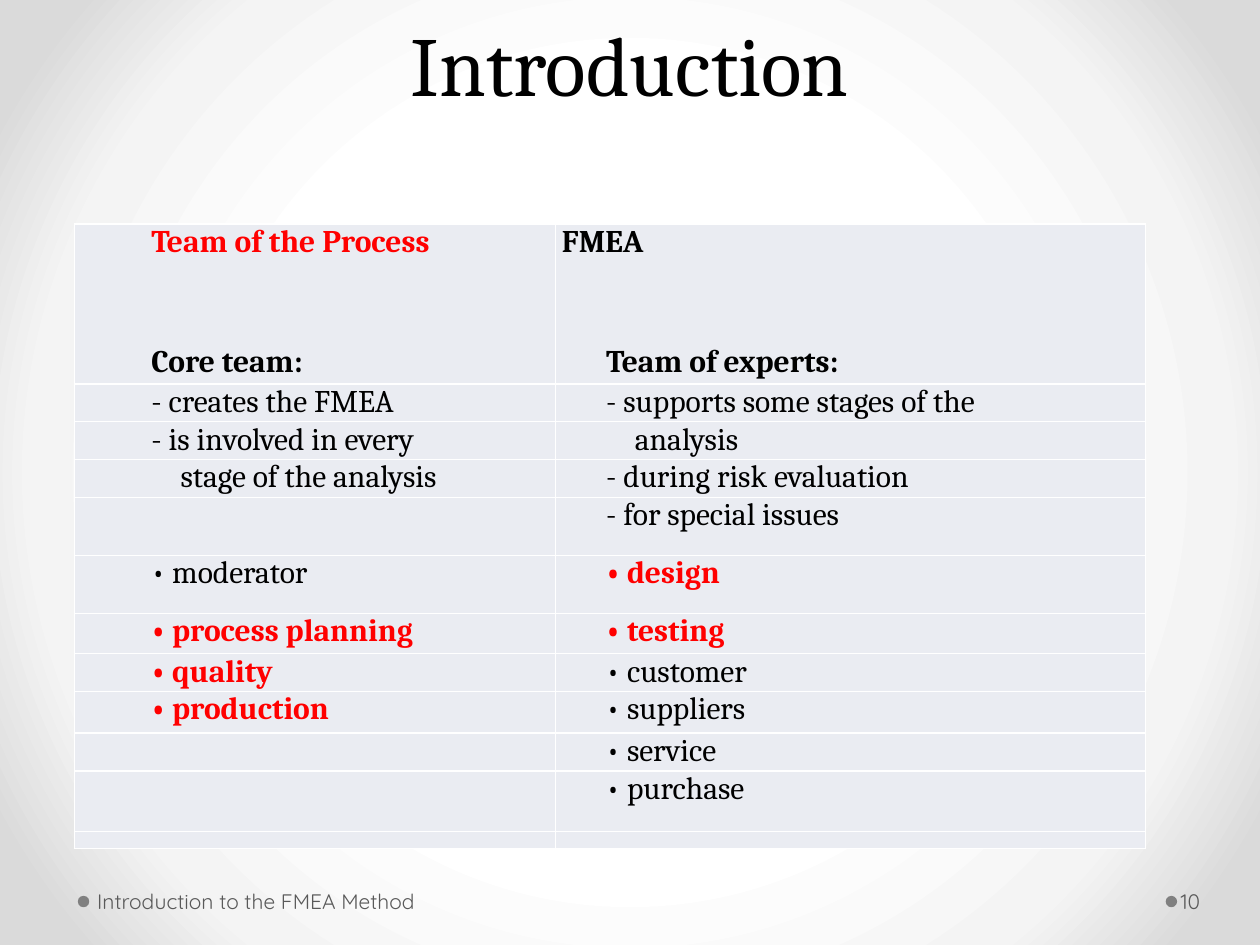
"""Build the FMEA introduction slide with its team table."""
from dataclasses import dataclass

from lxml import etree
from pptx import Presentation
from pptx import util as u
from pptx.dml import color
from pptx.enum import shapes, text
from pptx.oxml import ns


@dataclass(frozen=True)
class Theme:
    serif: str = "Cambria"
    sans: str = "Quicksand"
    ink: str = "000000"
    accent: str = "FF0000"
    muted: str = "595959"
    dot: str = "808080"
    cell: str = "EAECF2"
    border: str = "FFFFFF"
    backdrop: tuple = ((50, "FFFFFF"), (76, "F4F4F4"), (92, "DADADA"))
    title: int = 48
    body: int = 18
    small: int = 12
    tiny: int = 8


def write(p, words, font=None, size=None, rgb=None, bold=False, indent=0, before=0, after=0):
    r = p.add_run()
    r.text = words
    r.font.name = font or th.serif
    r.font.size = u.Pt(size or th.body)
    r.font.bold = bold
    r.font.color.rgb = color.RGBColor.from_string(rgb or th.ink)
    p.space_before, p.space_after = u.Pt(before), u.Pt(after)
    pPr = p._p.get_or_add_pPr()
    pPr.set("marL", str(u.Cm(indent)))
    pPr.set("indent", "0")


th = Theme()
prs = Presentation()
prs.slide_width, prs.slide_height = u.Cm(25.4), u.Cm(19.05)
s = prs.slides.add_slide(prs.slide_layouts[5])

s.background.fill.gradient()
grad = s.background._cSld.find(".//" + ns.qn("a:gradFill"))
for child in list(grad):
    grad.remove(child)
stops = etree.SubElement(grad, ns.qn("a:gsLst"))
for pos, rgb in th.backdrop:
    stop = etree.SubElement(stops, ns.qn("a:gs"), pos=str(pos * 1000))
    etree.SubElement(stop, ns.qn("a:srgbClr"), val=rgb)
circle = etree.SubElement(grad, ns.qn("a:path"), path="circle")
etree.SubElement(circle, ns.qn("a:fillToRect"), l="50000", t="50000", r="50000", b="50000")

title = s.shapes.title
title.left, title.top, title.width, title.height = u.Cm(1.27), 0, u.Cm(22.86), u.Cm(4.45)
tf = title.text_frame
tf.vertical_anchor = text.MSO_ANCHOR.BOTTOM
tf.margin_bottom = u.Cm(2.17)
p = tf.paragraphs[0]
p.alignment = text.PP_ALIGN.CENTER
p.line_spacing = u.Pt(58)
write(p, "Introduction", size=th.title)

footers = [
    ("Introduction to the FMEA Method", 1.57, 1.83, 7.9, 0.13),
    ("10", 23.5, 23.72, 1.55, 0.08),
]
for words, dot_left, left, width, inset in footers:
    sp = s.shapes.add_shape(shapes.MSO_SHAPE.OVAL, u.Cm(dot_left), u.Cm(18.06), u.Cm(0.23), u.Cm(0.23))
    sp.shadow.inherit = False
    sp.fill.solid()
    sp.fill.fore_color.rgb = color.RGBColor.from_string(th.dot)
    sp.line.fill.background()
    tf = s.shapes.add_textbox(u.Cm(left), u.Cm(17.65), u.Cm(width), u.Cm(1.02)).text_frame
    tf.word_wrap = True
    tf.vertical_anchor = text.MSO_ANCHOR.MIDDLE
    tf.margin_left, tf.margin_right = u.Cm(inset), u.Cm(0.13)
    write(tf.paragraphs[0], words, font=th.sans, size=th.small, rgb=th.muted)

core, experts = 1.52, 0.99
red = dict(rgb=th.accent, bold=True)
rows = [
    (0.74, ("- creates the FMEA", {}), ("- supports some stages of the", {})),
    (0.74, ("- is involved in every", {}), ("analysis", dict(indent=1.57))),
    (0.76, ("stage of the analysis", dict(indent=2.11)), ("- during risk evaluation", {})),
    (1.17, None, ("- for special issues", {})),
    (1.17, ("• moderator", {}), ("• design", red)),
    (0.81, ("• process planning", red), ("• testing", red)),
    (0.74, ("• quality", red), ("• customer", {})),
    (0.84, ("• production", red), ("• suppliers", {})),
    (0.72, None, ("• service", {})),
    (1.22, None, ("• purchase", {})),
    (0.33, None, None),
]
heights = [3.18] + [row[0] for row in rows]
widths = [9.7, 11.89]
table = s.shapes.add_table(len(heights), 2, u.Cm(1.5), u.Cm(4.52), u.Cm(sum(widths)), u.Cm(sum(heights))).table
table.first_row = table.horz_banding = False
for col, width in zip(table.columns, widths):
    col.width = u.Cm(width)
for row, height in zip(table.rows, heights):
    row.height = u.Cm(height)

for cell in table.iter_cells():
    cell.margin_left = cell.margin_right = u.Cm(0.03)
    cell.margin_top = cell.margin_bottom = 0
    tcPr = cell._tc.get_or_add_tcPr()
    for side in ("a:lnL", "a:lnR", "a:lnT", "a:lnB"):
        ln = etree.SubElement(tcPr, ns.qn(side), w=str(u.Pt(1)))
        paint = etree.SubElement(ln, ns.qn("a:solidFill"))
        etree.SubElement(paint, ns.qn("a:srgbClr"), val=th.border)
    cell.fill.solid()
    cell.fill.fore_color.rgb = color.RGBColor.from_string(th.cell)

headings = [
    ("Team of the Process", th.accent, core, "Core team:", core),
    ("FMEA", th.ink, 0.1, "Team of experts:", experts),
]
for c, (head, rgb, head_indent, team, team_indent) in enumerate(headings):
    tf = table.cell(0, c).text_frame
    write(tf.paragraphs[0], head, rgb=rgb, bold=True, indent=head_indent, after=24)
    write(tf.add_paragraph(), team, bold=True, indent=team_indent, before=24)

for i, (height, *entries) in enumerate(rows, 1):
    for c, (entry, indent) in enumerate(zip(entries, (core, experts))):
        p = table.cell(i, c).text_frame.paragraphs[0]
        if entry:
            words, fmt = entry
            write(p, words, **{"indent": indent, **fmt})
        else:
            etree.SubElement(p._p, ns.qn("a:endParaRPr"), sz=str(th.tiny * 100))

prs.save("out.pptx")
